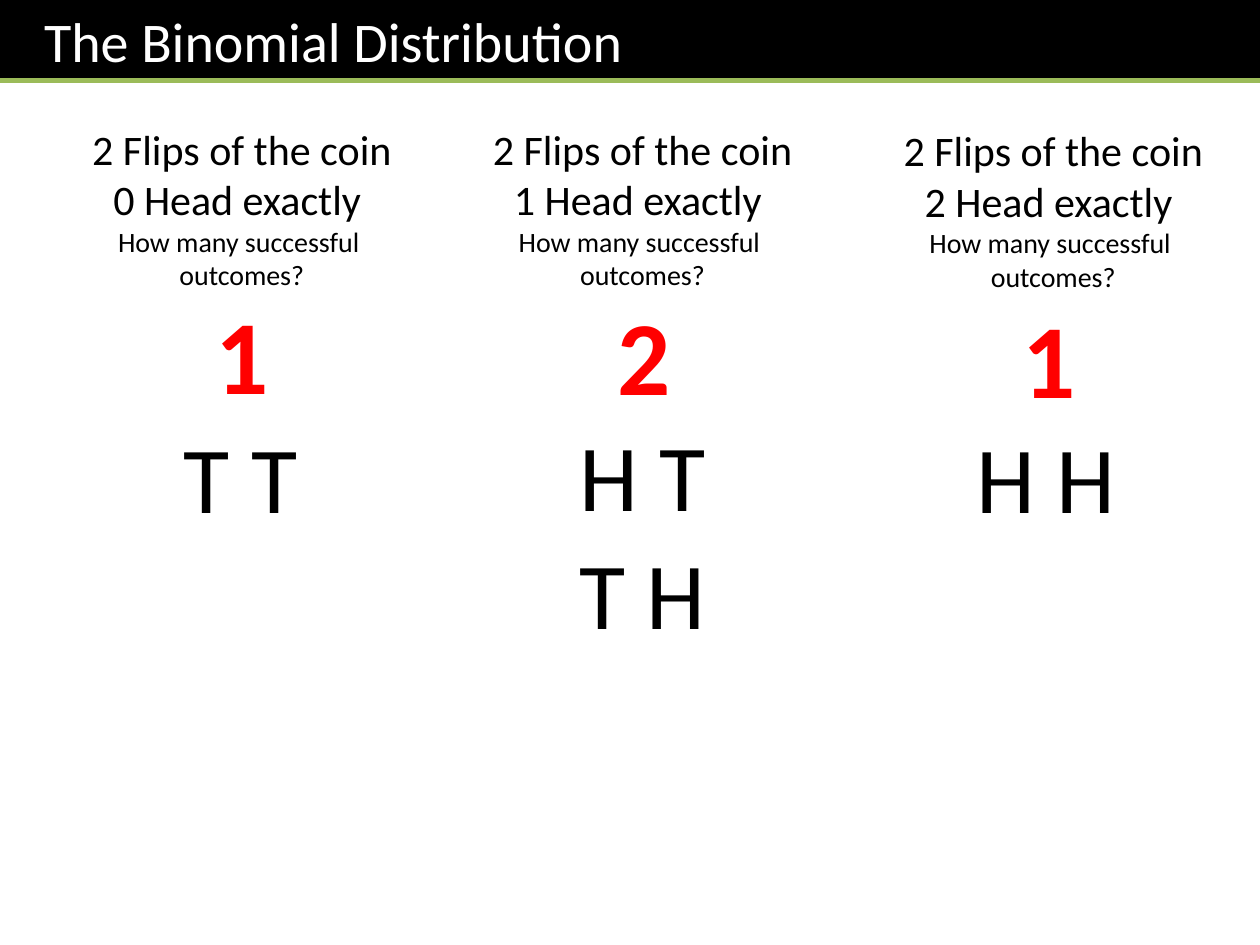
from pptx import Presentation
from pptx.dml.color import RGBColor
from pptx.enum.shapes import MSO_CONNECTOR, MSO_SHAPE
from pptx.enum.text import MSO_ANCHOR, PP_ALIGN
from pptx.util import Inches, Pt
from lxml import etree

RECT, STRAIGHT = MSO_SHAPE.RECTANGLE, MSO_CONNECTOR.STRAIGHT
LEFT, CENTER, TOP = PP_ALIGN.LEFT, PP_ALIGN.CENTER, MSO_ANCHOR.TOP
BLACK = RGBColor(0x00, 0x00, 0x00)
WHITE = RGBColor(0xFF, 0xFF, 0xFF)
RED = RGBColor(0xFF, 0x00, 0x00)
GREEN = RGBColor(0x9B, 0xBB, 0x59)
A_NS = "http://schemas.openxmlformats.org/drawingml/2006/main"

W, H = 10, 7.5
BAR_H = 0.64
ROW_H = 0.94  # distance between outcome rows

prs = Presentation()
prs.slide_width, prs.slide_height = Inches(W), Inches(H)
s = prs.slides.add_slide(prs.slide_layouts[6])


def write(tf, lines, color=BLACK, align=CENTER, bold=False):
    """Fill a text frame with (text, size) lines."""
    tf.word_wrap = True
    tf.vertical_anchor = TOP
    for i, (text, size) in enumerate(lines):
        p = tf.paragraphs[0] if i == 0 else tf.add_paragraph()
        p.text = text
        p.alignment = align
        p.font.name = "Calibri"
        p.font.size = Pt(size)
        p.font.bold = bold
        p.font.color.rgb = color


def add_text(center, top, width, height, lines, **style):
    """Add a text box centred on a column."""
    tb = s.shapes.add_textbox(Inches(center - width / 2), Inches(top),
                              Inches(width), Inches(height))
    write(tb.text_frame, lines, **style)


# Columns: heads, centres of question, count and outcomes, count top, outcomes
columns = [
    (0, 1.92, 1.92, 1.91, 2.25, 3.28, ["T T"]),
    (1, 5.10, 5.11, 5.10, 2.26, 3.26, ["H T", "T H"]),
    (2, 8.36, 8.33, 8.30, 2.28, 3.28, ["H H"]),
]
for heads, ask_x, count_x, out_x, count_y, out_y, outcomes in columns:
    add_text(ask_x, 0.94 if heads == 2 else 0.93, 2.7, 1.45, [
        ("2 Flips of the coin", 24),
        (f"{heads} Head exactly ", 24),
        ("How many successful ", 16),
        ("outcomes?", 16),
    ])
    add_text(count_x, count_y, 0.64, 1.11, [(str(len(outcomes)), 60)],
             color=RED, bold=True)
    for row, outcome in enumerate(outcomes):
        add_text(out_x, out_y + row * ROW_H, 1.51, 1.01, [(outcome, 54)])

# Title bar
bar = s.shapes.add_shape(RECT, 0, 0, Inches(W), Inches(BAR_H))
bar.shadow.inherit = False
bar.fill.solid()
bar.fill.fore_color.rgb = BLACK
bar.line.fill.background()
bar.text_frame.margin_left = Inches(0.35)
write(bar.text_frame, [("The Binomial Distribution", 32)], color=WHITE, align=LEFT)

# Green rule under the title
rule = s.shapes.add_connector(STRAIGHT, 0, Inches(BAR_H), Inches(W), Inches(BAR_H))
rule.line.color.rgb = GREEN
rule.line.width = Pt(3)
etree.SubElement(rule._element.spPr, f"{{{A_NS}}}effectLst")

prs.save("out.pptx")
